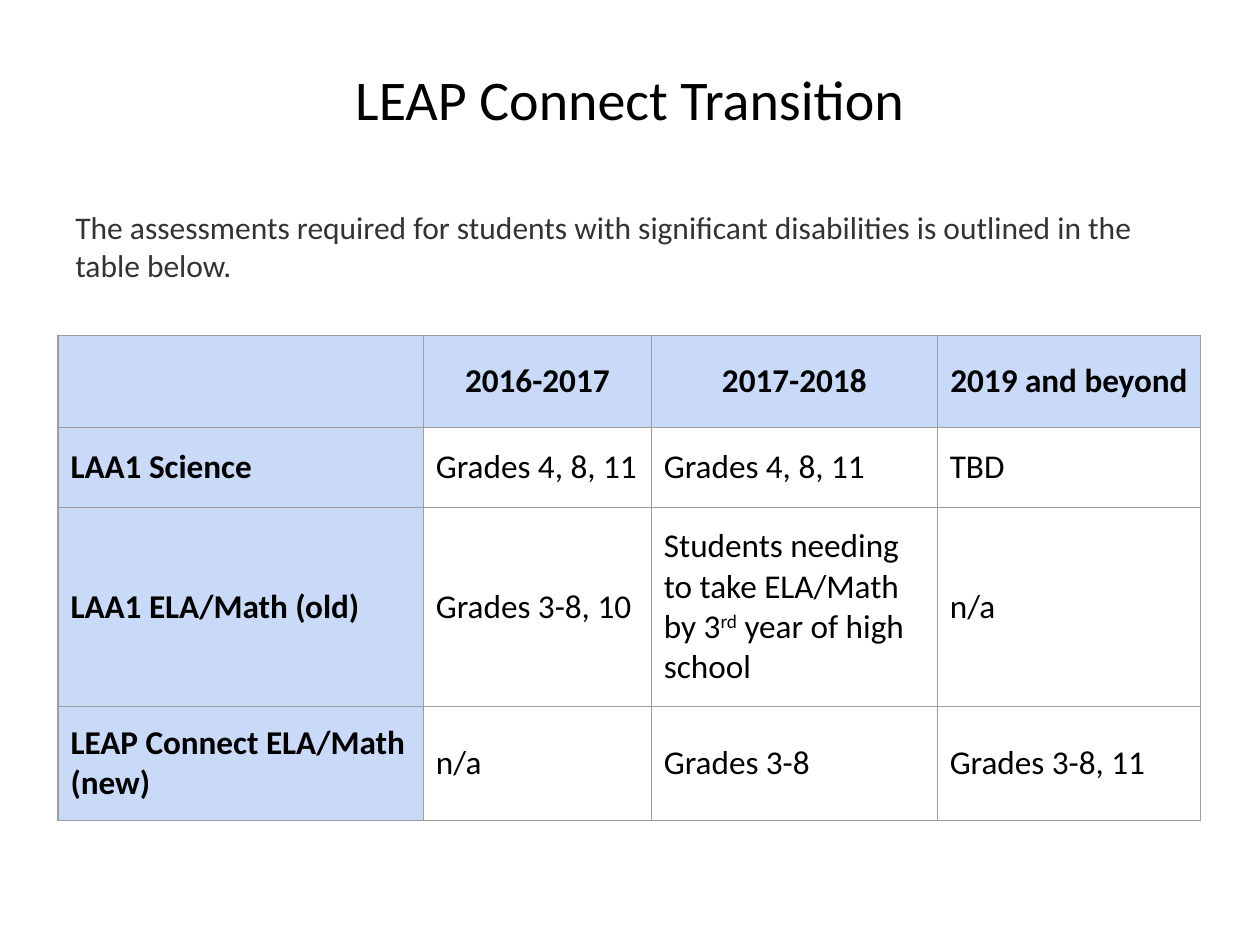
from lxml import etree
from pptx import Presentation
from pptx import util as u
from pptx.dml import color
from pptx.enum import text as t
from pptx.oxml import ns

Pt = u.Pt
HUES = {"ink": "000000", "body": "333333", "head": "C9DAF8", "rule": "9E9E9E"}
COLS = [208.8, 130.3, 163.4, 150.5]
ROWS = [52.6, 45.7, 113.8, 65.2]
# A cell may be a list of (words, raised) parts.
CELLS = [
    ["", "2016-2017", "2017-2018", "2019 and beyond"],
    ["LAA1 Science", "Grades 4, 8, 11", "Grades 4, 8, 11", "TBD"],
    ["LAA1 ELA/Math (old)", "Grades 3-8, 10",
     [("Students needing to take ELA/Math by 3", False), ("rd", True),
      (" year of high school", False)], "n/a"],
    ["LEAP Connect ELA/Math (new)", "n/a", "Grades 3-8", "Grades 3-8, 11"],
]


def paint(hue):
    return color.RGBColor.from_string(HUES[hue])


def apply(item, form):
    for key, val in form.items():
        setattr(item, key, val)


def write(para, parts, size, hue="ink", bold=False):
    """Fill a paragraph with a string or with (words, raised) parts."""
    if isinstance(parts, str):
        parts = [(parts, False)]
    for words, raised in parts:
        run = para.add_run()
        run.text = words
        apply(run.font, {"name": "Calibri", "size": Pt(size), "bold": bold})
        run.font.color.rgb = paint(hue)
        if raised:
            run._r.get_or_add_rPr().set("baseline", "30000")


def rule(cell):
    """Draw thin lines on all four sides of a cell."""
    props = cell._tc.get_or_add_tcPr()
    for side in "LRTB":
        line = etree.SubElement(props, ns.qn(f"a:ln{side}"), w=str(Pt(0.75)))
        fill = etree.SubElement(line, ns.qn("a:solidFill"))
        etree.SubElement(fill, ns.qn("a:srgbClr"), val=HUES["rule"])


def add_title(slide, x, y, w, h):
    title = slide.shapes.title
    apply(title, {"left": Pt(x), "top": Pt(y), "width": Pt(w), "height": Pt(h)})
    frame = title.text_frame
    apply(frame, {"vertical_anchor": t.MSO_ANCHOR.MIDDLE, "word_wrap": True})
    para = frame.paragraphs[0]
    para.alignment = t.PP_ALIGN.CENTER
    write(para, "LEAP Connect Transition", 32)


def add_intro(slide, x, y, w, h):
    frame = slide.shapes.add_textbox(Pt(x), Pt(y), Pt(w), Pt(h)).text_frame
    pad = Pt(7.2)
    apply(frame, {"word_wrap": True, "margin_left": pad, "margin_right": pad,
                  "margin_top": pad, "margin_bottom": pad})
    write(frame.paragraphs[0], "The assessments required for students with significant "
          "disabilities is outlined in the table below.", 18, "body")


def add_grid(slide, x, y):
    table = slide.shapes.add_table(len(ROWS), len(COLS), Pt(x), Pt(y),
                                   Pt(sum(COLS)), Pt(sum(ROWS))).table
    apply(table, {"first_row": False, "horz_banding": False})
    for col, wide in zip(table.columns, COLS):
        col.width = Pt(wide)
    for row, tall in zip(table.rows, ROWS):
        row.height = Pt(tall)
    form = {"margin_left": Pt(7.2), "margin_right": Pt(7.2), "margin_top": Pt(9.4),
            "margin_bottom": Pt(9.4), "vertical_anchor": t.MSO_ANCHOR.MIDDLE}
    for r, line in enumerate(CELLS):
        for c, words in enumerate(line):
            cell = table.cell(r, c)
            apply(cell, form)
            rule(cell)
            head = r == 0 or c == 0
            if head:
                cell.fill.solid()
                cell.fill.fore_color.rgb = paint("head")
            else:
                cell.fill.background()
            para = cell.text_frame.paragraphs[0]
            para.alignment = t.PP_ALIGN.LEFT if r else t.PP_ALIGN.CENTER
            if words:
                write(para, words, 19, bold=head)


def main():
    deck = Presentation()
    apply(deck, {"slide_width": Pt(720), "slide_height": Pt(540)})
    slide = deck.slides.add_slide(deck.slide_layouts[5])
    add_title(slide, 36, 0, 648, 111.6)
    add_intro(slide, 36, 111.6, 648, 80)
    add_grid(slide, 33.1, 191.6)
    deck.save("out.pptx")


if __name__ == "__main__":
    main()
